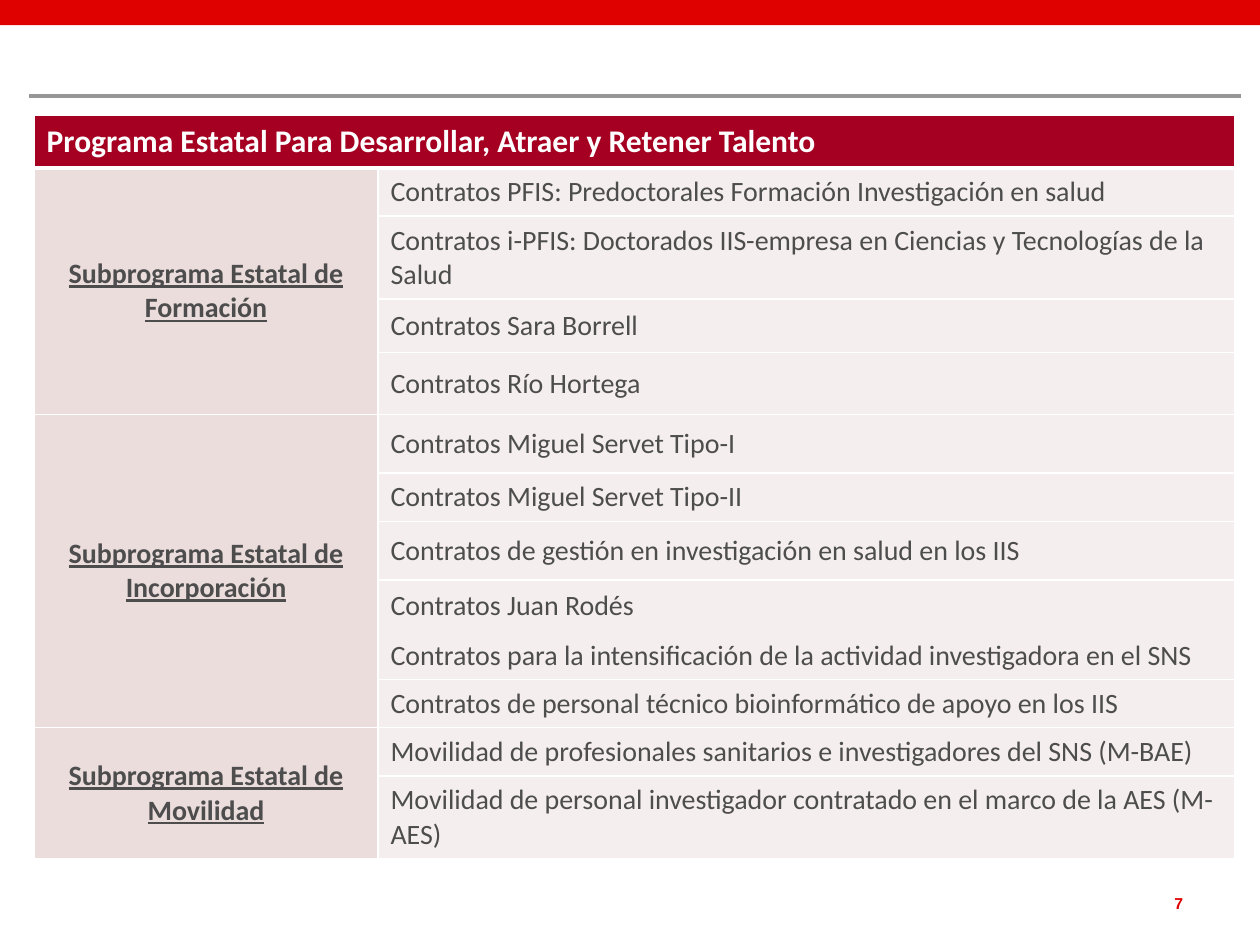
"""Build the slide listing the subprogrammes and grants of the state talent programme."""

from dataclasses import dataclass

import lxml.etree
import pptx
import pptx.dml.color
import pptx.enum.shapes
import pptx.enum.text
import pptx.oxml.ns
import pptx.util

Pt = pptx.util.Pt

COLORS = {
    "red": "DF0000",
    "crimson": "A50021",
    "rule": "969696",
    "text": "4D4D4D",
    "white": "FFFFFF",
    "group": "ECDDDD",
    "grant": "F5EEEE",
}


@dataclass(frozen=True)
class Grant:
    name: str
    height: float
    top_border: float = 1
    bottom_border: float = 1


@dataclass(frozen=True)
class Subprogram:
    name: str
    grants: tuple[Grant, ...]


@dataclass(frozen=True)
class CellStyle:
    fill: str
    color: str
    size: float = 16
    bold: bool = False
    underline: bool = False
    centered: bool = False


PROGRAM = "Programa Estatal Para Desarrollar, Atraer y Retener Talento"
HEADER_HEIGHT = 30
HEADER_STYLE = CellStyle("crimson", "white", size=18, bold=True)
GROUP_STYLE = CellStyle("group", "text", bold=True, underline=True, centered=True)
GRANT_STYLE = CellStyle("grant", "text")
SUBPROGRAMS = (
    Subprogram("Subprograma Estatal de Formación", (
        Grant("Contratos PFIS: Predoctorales Formación Investigación en salud", 27.5, top_border=3),
        Grant("Contratos i-PFIS: Doctorados IIS-empresa en Ciencias y Tecnologías de la Salud", 47.5),
        Grant("Contratos Sara Borrell", 30.5),
        Grant("Contratos Río Hortega", 35.5),
    )),
    Subprogram("Subprograma Estatal de Incorporación", (
        Grant("Contratos Miguel Servet Tipo-I", 33.5),
        Grant("Contratos Miguel Servet Tipo-II", 27.5),
        Grant("Contratos de gestión en investigación en salud en los IIS", 33.5),
        Grant("Contratos Juan Rodés", 29.5, bottom_border=0),
        Grant("Contratos para la intensificación de la actividad investigadora en el SNS", 27.5, top_border=0),
        Grant("Contratos de personal técnico bioinformático de apoyo en los IIS", 27.5),
    )),
    Subprogram("Subprograma Estatal de Movilidad", (
        Grant("Movilidad de profesionales sanitarios e investigadores del SNS (M-BAE)", 27.5),
        Grant("Movilidad de personal investigador contratado en el marco de la AES (M-AES)", 47.5),
    )),
)


def rgb(name: str) -> pptx.dml.color.RGBColor:
    """Return the named palette colour."""
    return pptx.dml.color.RGBColor.from_string(COLORS[name])


def set_borders(cell, top: float = 1, bottom: float = 1) -> None:
    """Draw white cell borders, leaving out those of zero width."""
    properties = cell._tc.get_or_add_tcPr()
    qn = pptx.oxml.ns.qn
    widths = {"a:lnL": 1, "a:lnR": 1, "a:lnT": top, "a:lnB": bottom}
    for index, (tag, width) in enumerate(widths.items()):
        line = lxml.etree.Element(qn(tag), w=str(Pt(width)))
        if width:
            fill = lxml.etree.SubElement(line, qn("a:solidFill"))
            lxml.etree.SubElement(fill, qn("a:srgbClr"), val=COLORS["white"])
        else:
            lxml.etree.SubElement(line, qn("a:noFill"))
        properties.insert(index, line)


def fill_cell(cell, text: str, style: CellStyle) -> None:
    """Write and format one table cell."""
    cell.fill.solid()
    cell.fill.fore_color.rgb = rgb(style.fill)
    cell.vertical_anchor = pptx.enum.text.MSO_ANCHOR.MIDDLE
    cell.text_frame.text = text
    paragraph = cell.text_frame.paragraphs[0]
    if style.centered:
        paragraph.alignment = pptx.enum.text.PP_ALIGN.CENTER
    font = paragraph.runs[0].font
    font.name = "Calibri"
    font.size = Pt(style.size)
    font.bold = style.bold
    font.underline = style.underline
    font.color.rgb = rgb(style.color)


def add_program_table(slide) -> None:
    """Add the table with one merged label cell per subprogramme."""
    heights = [HEADER_HEIGHT] + [grant.height for group in SUBPROGRAMS for grant in group.grants]
    widths = (196.5, 489.5)
    frame = slide.shapes.add_table(
        len(heights), len(widths), Pt(19.5), Pt(66), Pt(sum(widths)), Pt(sum(heights))
    )
    table = frame.table
    for column, width in zip(table.columns, widths):
        column.width = Pt(width)
    for row, height in zip(table.rows, heights):
        row.height = Pt(height)

    header = table.cell(0, 0)
    header.merge(table.cell(0, 1))
    fill_cell(header, PROGRAM, HEADER_STYLE)
    for cell in table.rows[0].cells:
        set_borders(cell, bottom=3)

    first_row = 1
    for group in SUBPROGRAMS:
        label = table.cell(first_row, 0)
        label.merge(table.cell(first_row + len(group.grants) - 1, 0))
        fill_cell(label, group.name, GROUP_STYLE)
        for row_index, grant in enumerate(group.grants, start=first_row):
            set_borders(table.cell(row_index, 0), top=grant.top_border or 1)
            grant_cell = table.cell(row_index, 1)
            fill_cell(grant_cell, grant.name, GRANT_STYLE)
            set_borders(grant_cell, grant.top_border, grant.bottom_border)
        first_row += len(group.grants)


def add_frame(slide) -> None:
    """Add the top band and the rule below it."""
    band = slide.shapes.add_shape(
        pptx.enum.shapes.MSO_SHAPE.RECTANGLE, 0, 0, Pt(720), Pt(14.4)
    )
    band.shadow.inherit = False
    band.fill.solid()
    band.fill.fore_color.rgb = rgb("red")
    band.line.fill.background()
    rule = slide.shapes.add_connector(
        pptx.enum.shapes.MSO_CONNECTOR.STRAIGHT, Pt(16.5), Pt(54.7), Pt(709), Pt(54.7)
    )
    rule.line.color.rgb = rgb("rule")
    rule.line.width = Pt(2.25)
    lxml.etree.SubElement(rule._element.spPr, pptx.oxml.ns.qn("a:effectLst"))


def add_page_number(slide, number: int) -> None:
    """Add the right-aligned page number."""
    box = slide.shapes.add_textbox(Pt(608.4), Pt(510.5), Pt(67.7), Pt(10.8))
    text_frame = box.text_frame
    text_frame.word_wrap = True
    text_frame.margin_left = text_frame.margin_right = 0
    text_frame.margin_top = text_frame.margin_bottom = 0
    text_frame.text = str(number)
    paragraph = text_frame.paragraphs[0]
    paragraph.alignment = pptx.enum.text.PP_ALIGN.RIGHT
    font = paragraph.runs[0].font
    font.name = "Arial"
    font.size = Pt(9)
    font.bold = True
    font.color.rgb = rgb("red")


def main() -> None:
    """Build and save the presentation."""
    presentation = pptx.Presentation()
    presentation.slide_width = Pt(720)
    presentation.slide_height = Pt(540)
    slide = presentation.slides.add_slide(presentation.slide_layouts[6])
    add_page_number(slide, 7)
    add_frame(slide)
    add_program_table(slide)
    presentation.save("out.pptx")


if __name__ == "__main__":
    main()
